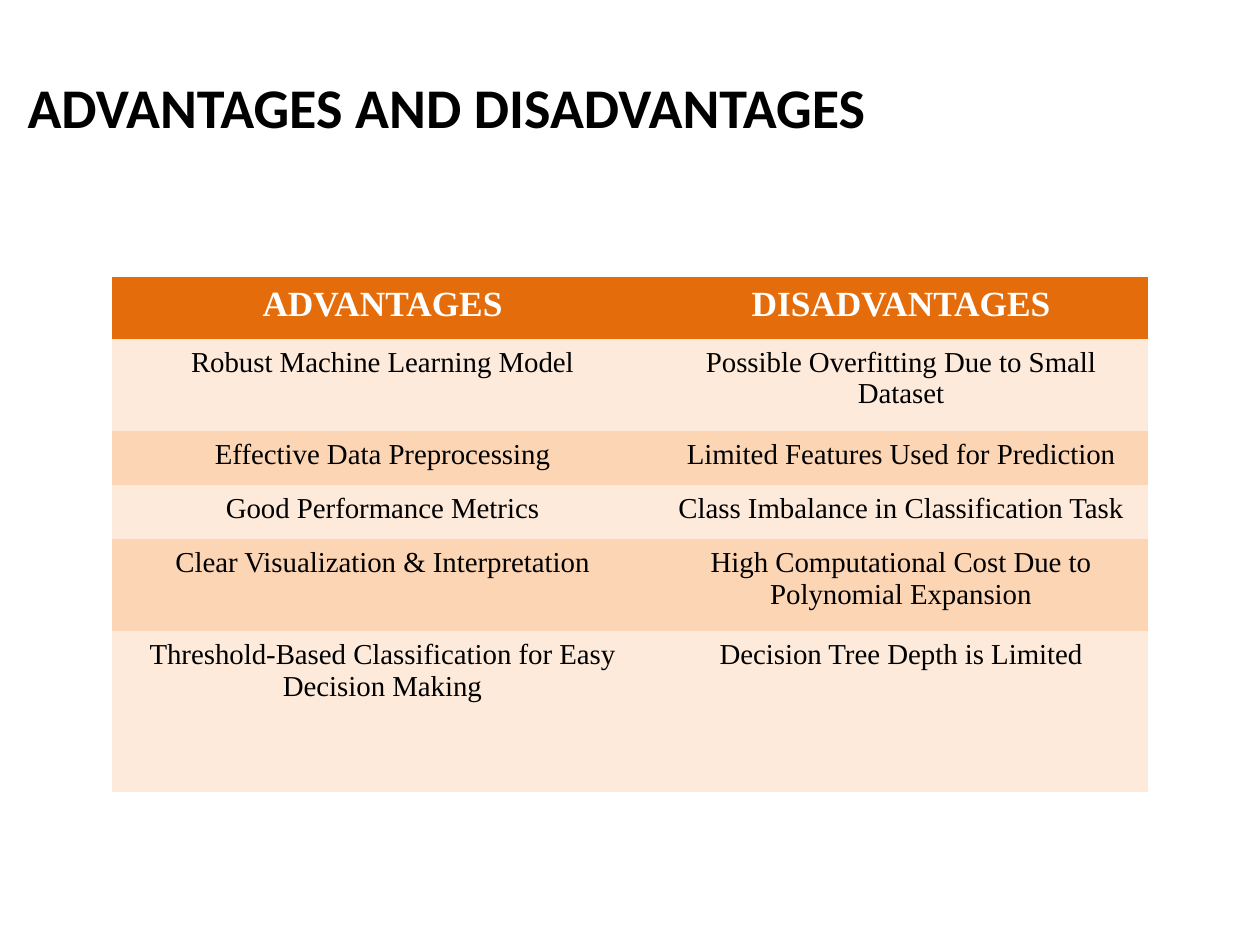
import pptx
import pptx.util
import pptx.dml.color
import pptx.enum.text

WIDE, HIGH = 10, 7.5
COLS = [4.3, 3.93]
ROWS = [0.49, 0.73, 0.43, 0.43, 0.73, 1.28]
HEAD, PALE, DEEP = "E46C0A", "FDEADA", "FCD5B5"
ITEMS = [
    ("ADVANTAGES", "DISADVANTAGES"),
    ("Robust Machine Learning Model", "Possible Overfitting Due to Small Dataset"),
    ("Effective Data Preprocessing", "Limited Features Used for Prediction"),
    ("Good Performance Metrics", "Class Imbalance in Classification Task"),
    ("Clear Visualization & Interpretation",
     "High Computational Cost Due to Polynomial Expansion"),
    ("Threshold-Based Classification for Easy Decision Making",
     "Decision Tree Depth is Limited"),
]
inch = pptx.util.Inches
ALIGN = pptx.enum.text.PP_ALIGN


def hue(code):
    return pptx.dml.color.RGBColor.from_string(code)


def write(frame, text, size, font="Times New Roman", color="000000",
          bold=False, align=ALIGN.CENTER):
    frame.word_wrap = True
    line = frame.paragraphs[0]
    line.alignment = align
    run = line.add_run()
    run.text = text
    run.font.name = font
    run.font.size = pptx.util.Pt(size)
    run.font.bold = bold
    run.font.color.rgb = hue(color)


def add_title(slide, text):
    box = slide.shapes.add_textbox(inch(0.012 * WIDE), inch(0.07 * HIGH),
                                   inch(0.718 * WIDE), inch(0.085 * HIGH))
    write(box.text_frame, text, 32, font="Calibri", bold=True, align=ALIGN.LEFT)


def fill_cell(cell, text, row):
    cell.margin_left = cell.margin_right = inch(0.06)
    cell.margin_top = cell.margin_bottom = inch(0.06)
    cell.fill.solid()
    if row == 0:
        cell.fill.fore_color.rgb = hue(HEAD)
        write(cell.text_frame, text, 20.2, color="FFFFFF", bold=True)
    else:
        cell.fill.fore_color.rgb = hue(PALE if row % 2 else DEEP)
        write(cell.text_frame, text, 16.5)


def add_grid(slide, items):
    wide, high = sum(COLS), sum(ROWS)
    grid = slide.shapes.add_table(
        len(ROWS), len(COLS), inch((WIDE - wide) / 2), inch(2.2),
        inch(wide), inch(high)).table
    for col, size in zip(grid.columns, COLS):
        col.width = inch(size)
    for row, size in zip(grid.rows, ROWS):
        row.height = inch(size)
    # No style borders between the filled cells
    style = grid._tbl.tblPr.find(
        "{http://schemas.openxmlformats.org/drawingml/2006/main}tableStyleId")
    style.text = "{2D5ABB26-0587-4C30-8999-92F81FD0307C}"
    for r, pair in enumerate(items):
        for c, text in enumerate(pair):
            fill_cell(grid.cell(r, c), text, r)


def main():
    deck = pptx.Presentation()
    deck.slide_width, deck.slide_height = inch(WIDE), inch(HIGH)
    slide = deck.slides.add_slide(deck.slide_layouts[6])
    # Comparison table, then the heading
    add_grid(slide, ITEMS)
    add_title(slide, "ADVANTAGES AND DISADVANTAGES")
    deck.save("out.pptx")


if __name__ == "__main__":
    main()
